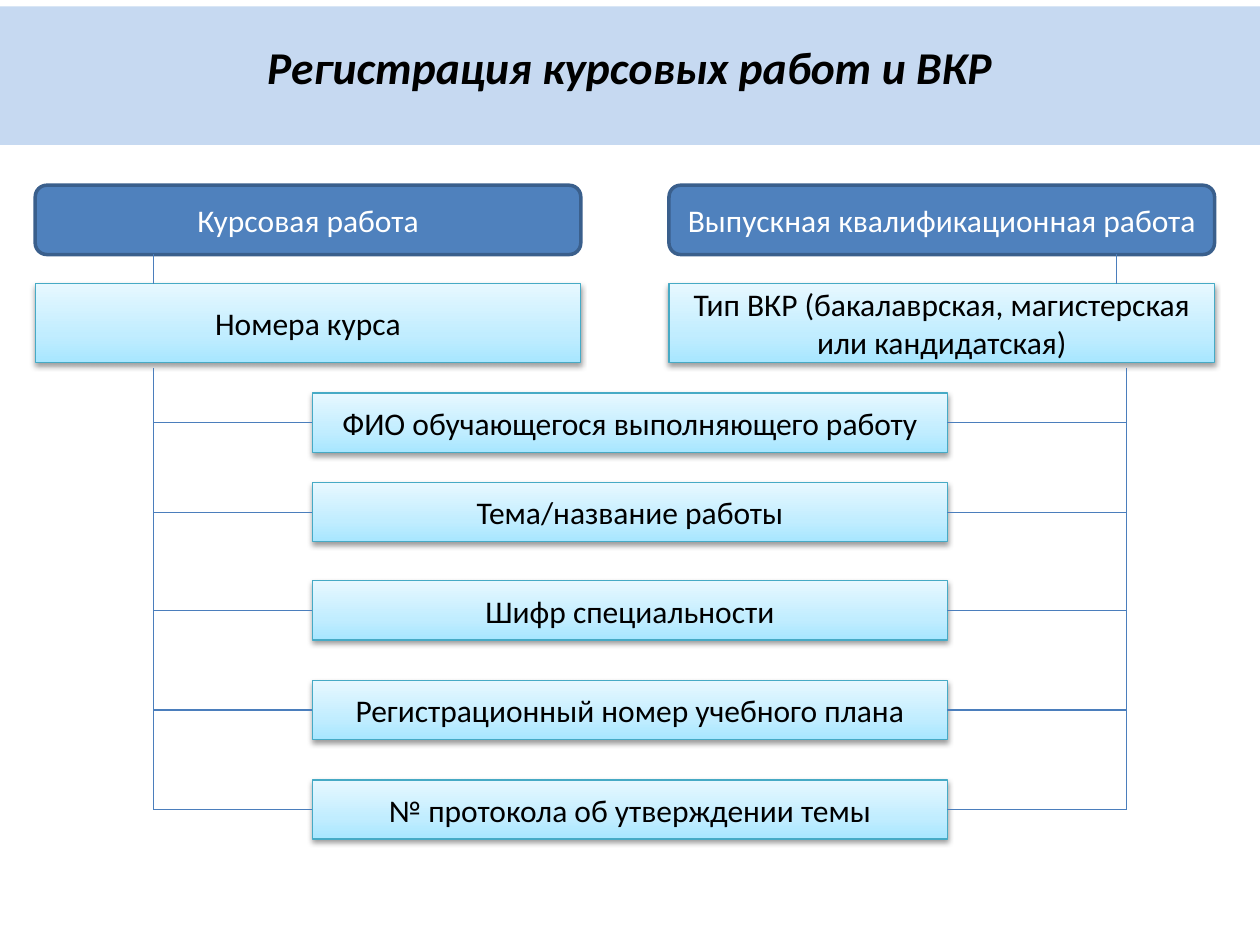
from lxml import etree
from pptx import Presentation
from pptx.dml.color import RGBColor
from pptx.enum import shapes, text
from pptx.oxml.ns import qn
from pptx.util import Inches, Pt

BLACK = RGBColor(0x00, 0x00, 0x00)
WHITE = RGBColor(0xFF, 0xFF, 0xFF)
BAND = RGBColor(0xC6, 0xD9, 0xF1)
BLUE = RGBColor(0x4F, 0x81, 0xBD)
DARK_BLUE = RGBColor(0x3A, 0x5F, 0x8C)
TEAL = RGBColor(0x46, 0xAA, 0xC5)
LINK = RGBColor(0x4B, 0x7E, 0xBC)
GRADIENT = [
    (0, RGBColor(0xA7, 0xE6, 0xFF)),
    (35, RGBColor(0xC1, 0xED, 0xFF)),
    (100, RGBColor(0xE7, 0xF8, 0xFF)),
]

FIELDS = [
    (3.12, "ФИО обучающегося выполняющего работу"),
    (3.83, "Тема/название работы"),
    (4.61, "Шифр специальности"),
    (5.4, "Регистрационный номер учебного плана"),
    (6.19, "№ протокола об утверждении темы"),
]


def set_text(sp, words, size, color, bold=False, italic=False):
    """Put centred, wrapped text into a shape."""
    tf = sp.text_frame
    tf.word_wrap = True
    tf.text = words
    p = tf.paragraphs[0]
    p.alignment = text.PP_ALIGN.CENTER
    font = p.runs[0].font
    font.name, font.size, font.color.rgb = "Calibri", Pt(size), color
    font.bold, font.italic = bold, italic


def add_color(parent, color, alpha=None):
    """Add an RGB colour element, optionally translucent."""
    clr = etree.SubElement(parent, qn("a:srgbClr"), val=str(color))
    if alpha is not None:
        etree.SubElement(clr, qn("a:alpha"), val=str(alpha * 1000))


def add_box(slide, kind, box, line, width, words, color):
    """Add an outlined shape with middle-anchored text."""
    sp = slide.shapes.add_shape(kind, *map(Inches, box))
    sp.shadow.inherit = False
    sp.line.color.rgb, sp.line.width = line, Pt(width)
    set_text(sp, words, 18, color)
    sp.text_frame.vertical_anchor = text.MSO_ANCHOR.MIDDLE
    return sp


def add_header(slide, box, words):
    """Add a rounded blue column header."""
    sp = add_box(slide, shapes.MSO_SHAPE.ROUNDED_RECTANGLE, box, DARK_BLUE, 2, words, WHITE)
    sp.fill.solid()
    sp.fill.fore_color.rgb = BLUE


def add_process(slide, box, words):
    """Add a light gradient process box with a soft shadow."""
    sp = add_box(slide, shapes.MSO_SHAPE.FLOWCHART_PROCESS, box, TEAL, 0.75, words, BLACK)
    sp.fill.gradient()
    props = sp._element.spPr
    stops = props.find(".//" + qn("a:gsLst"))
    stops.clear()
    for pos, color in GRADIENT:
        add_color(etree.SubElement(stops, qn("a:gs"), pos=str(pos * 1000)), color)
    props.find(".//" + qn("a:lin")).set("ang", str(270 * 60000))
    shadow = etree.SubElement(
        props.find(qn("a:effectLst")), qn("a:outerShdw"),
        blurRad=str(Pt(3.1)), dist=str(Pt(1.6)), dir=str(90 * 60000), rotWithShape="0")
    add_color(shadow, BLACK, 38)
    return sp


def add_line(slide, x1, y1, x2, y2):
    """Add a thin straight connector."""
    line = slide.shapes.add_connector(
        shapes.MSO_CONNECTOR.STRAIGHT, *map(Inches, (x1, y1, x2, y2)))
    line.line.color.rgb, line.line.width = LINK, Pt(0.75)
    etree.SubElement(line._element.spPr, qn("a:effectLst"))
    return line


def add_title(slide, left, top, width, height):
    """Add the title band and its heading."""
    band = slide.shapes.add_shape(
        shapes.MSO_SHAPE.RECTANGLE, *map(Inches, (left, top, width, height)))
    band.shadow.inherit = False
    band.fill.solid()
    band.fill.fore_color.rgb = BAND
    band.line.fill.background()
    heading = slide.shapes.add_textbox(*map(Inches, (left, top + 0.21, width, 0.61)))
    set_text(heading, "Регистрация курсовых работ и ВКР", 26, BLACK, True, True)


def add_column(slide, left, top, width, header, detail, stem_x):
    """Add a work type: its header, stem and detail box."""
    add_header(slide, (left, top, width, 0.55), header)
    add_process(slide, (left, top + 0.78, width, 0.63), detail)
    add_line(slide, stem_x, top + 0.55, stem_x, top + 0.78)


def add_fields(slide, left, width, height, left_rail, right_rail):
    """Add the shared fields and the rails that link them."""
    for top, words in FIELDS:
        sp = add_process(slide, (left, top, width, height), words)
        middle = top + height / 2
        add_line(slide, left_rail, middle, left, middle).end_connect(sp, 1)
        add_line(slide, left + width, middle, right_rail, middle).begin_connect(sp, 3)
    for rail in (left_rail, right_rail):
        add_line(slide, rail, 2.92, rail, middle)


def main():
    """Build and save the slide."""
    prs = Presentation()
    prs.slide_width, prs.slide_height = Inches(10), Inches(7.5)
    slide = prs.slides.add_slide(prs.slide_layouts[6])
    add_title(slide, 0, 0.05, 10, 1.1)
    add_column(slide, 0.28, 1.47, 4.33, "Курсовая работа", "Номера курса", 1.22)
    add_column(slide, 5.31, 1.47, 4.33, "Выпускная квалификационная работа",
               "Тип ВКР (бакалаврская, магистерская или кандидатская)", 8.86)
    add_fields(slide, 2.48, 5.04, 0.47, 1.22, 8.94)
    prs.save("out.pptx")


if __name__ == "__main__":
    main()
